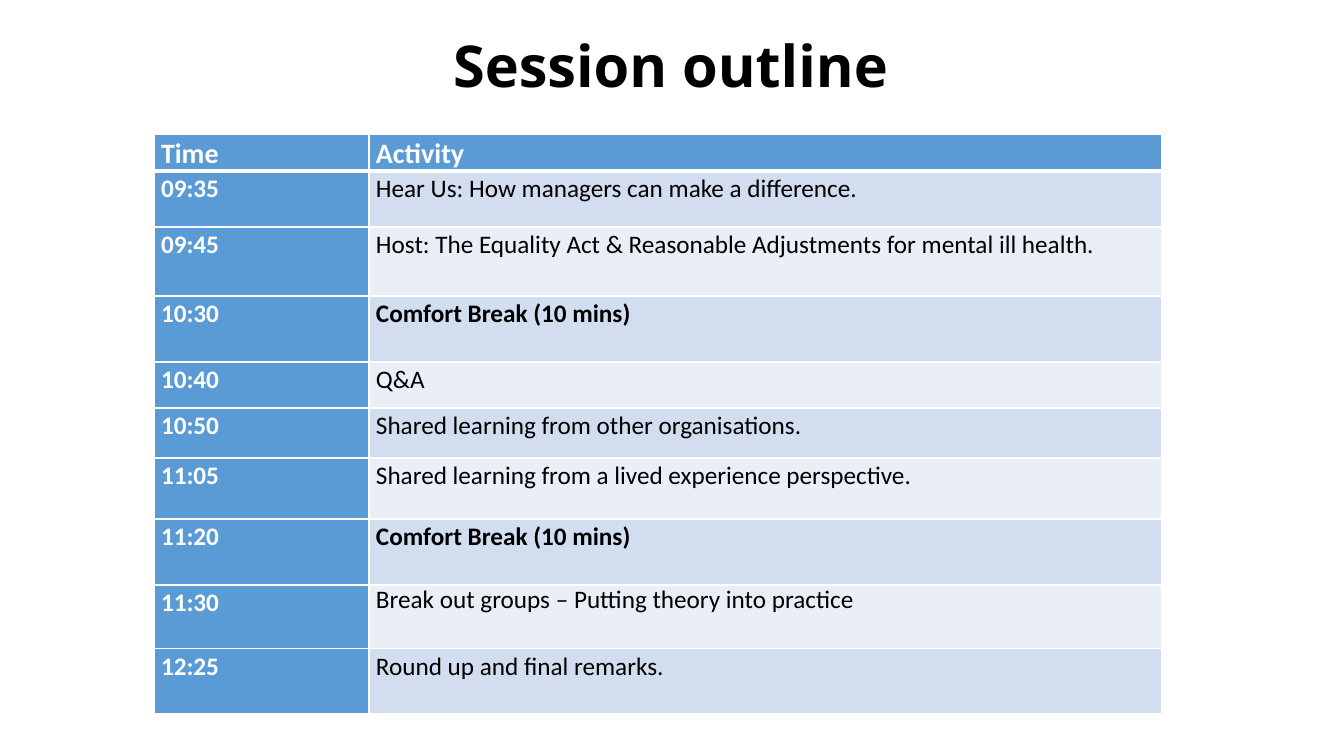
from dataclasses import dataclass

from lxml import etree
from pptx import Presentation
from pptx import util as u
from pptx.dml.color import RGBColor
from pptx.enum import text
from pptx.oxml.ns import qn

SCALE = 914400 / 100.8


@dataclass(frozen=True)
class Theme:
    blue: str = "5B9BD5"
    bands: tuple = ("D2DEEF", "EAEFF7")
    white: str = "FFFFFF"
    black: str = "000000"
    title: float = 41.2
    head: float = 20
    body: float = 18
    display: str = "Open Sans"
    font: str = "Calibri"


THEME = Theme()
COLS = (215, 793)

# Row height, time, activity
ROWS = (
    (37, "Time", "Activity"),
    (56, "09:35", "Hear Us: How managers can make a difference."),
    (69, "09:45", "Host: The Equality Act & Reasonable Adjustments for mental ill health."),
    (66, "10:30", "Comfort Break (10 mins)"),
    (46, "10:40", "Q&A"),
    (50, "10:50", "Shared learning from other organisations."),
    (61, "11:05", "Shared learning from a lived experience perspective."),
    (66, "11:20", "Comfort Break (10 mins)"),
    (64, "11:30", "Break out groups – Putting theory into practice"),
    (65, "12:25", "Round up and final remarks."),
)


def px(n):
    return u.Emu(round(n * SCALE))


def style(run, font, size, color, bold):
    run.font.name = font
    run.font.size = u.Pt(size)
    run.font.bold = bold
    run.font.color.rgb = RGBColor.from_string(color)


def add_title(slide, words):
    box = slide.shapes.add_textbox(px(50), px(30), px(1241), px(126))
    frame = box.text_frame
    frame.word_wrap = True
    frame.margin_top = 0
    frame.text = words
    para = frame.paragraphs[0]
    para.alignment = text.PP_ALIGN.CENTER
    style(para.runs[0], THEME.display, THEME.title, THEME.black, True)


def add_edge(cell, side, width):
    props = cell._tc.get_or_add_tcPr()
    line = etree.SubElement(props, qn(f"a:ln{side}"), w=str(u.Pt(width)))
    fill = etree.SubElement(line, qn("a:solidFill"))
    etree.SubElement(fill, qn("a:srgbClr"), val=THEME.white)


def fill_cell(cell, words, row, col):
    head = row == 0
    label = head or col == 0

    # Text
    cell.margin_left = cell.margin_right = px(7)
    cell.margin_top = cell.margin_bottom = 0
    cell.text = words
    para = cell.text_frame.paragraphs[0]
    if "–" not in words:
        para.line_spacing = 1.07
    style(para.runs[0], THEME.font, THEME.head if head else THEME.body,
          THEME.white if label else THEME.black,
          label or words.startswith("Comfort"))

    # Borders come before the fill in the cell properties
    for side in "LRTB":
        heavy = (side, row) in (("B", 0), ("T", 1))
        add_edge(cell, side, 3 if heavy else 1)
    cell.fill.solid()
    color = THEME.blue if label else THEME.bands[(row - 1) % 2]
    cell.fill.fore_color.rgb = RGBColor.from_string(color)


def add_plan(slide):
    high = sum(row[0] for row in ROWS)
    table = slide.shapes.add_table(
        len(ROWS), len(COLS), px(154), px(134), px(sum(COLS)), px(high)).table
    for col, wide in zip(table.columns, COLS):
        col.width = px(wide)
    for i, (tall, *words) in enumerate(ROWS):
        table.rows[i].height = px(tall)
        for j, word in enumerate(words):
            fill_cell(table.cell(i, j), word, i, j)


def main():
    deck = Presentation()
    deck.slide_width, deck.slide_height = px(1344), px(756)
    slide = deck.slides.add_slide(deck.slide_layouts[6])
    add_title(slide, "Session outline")
    add_plan(slide)
    deck.save("out.pptx")


if __name__ == "__main__":
    main()
